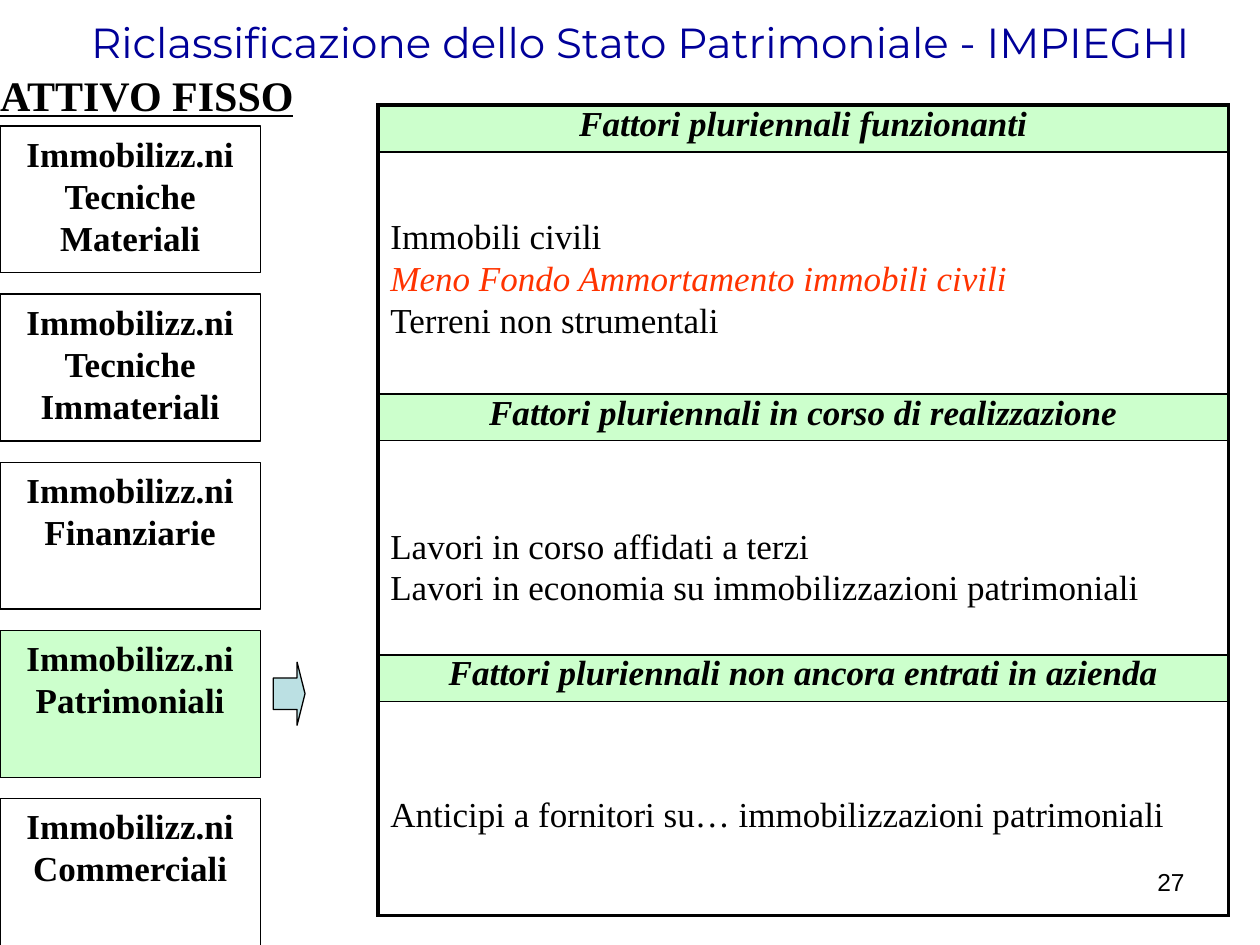
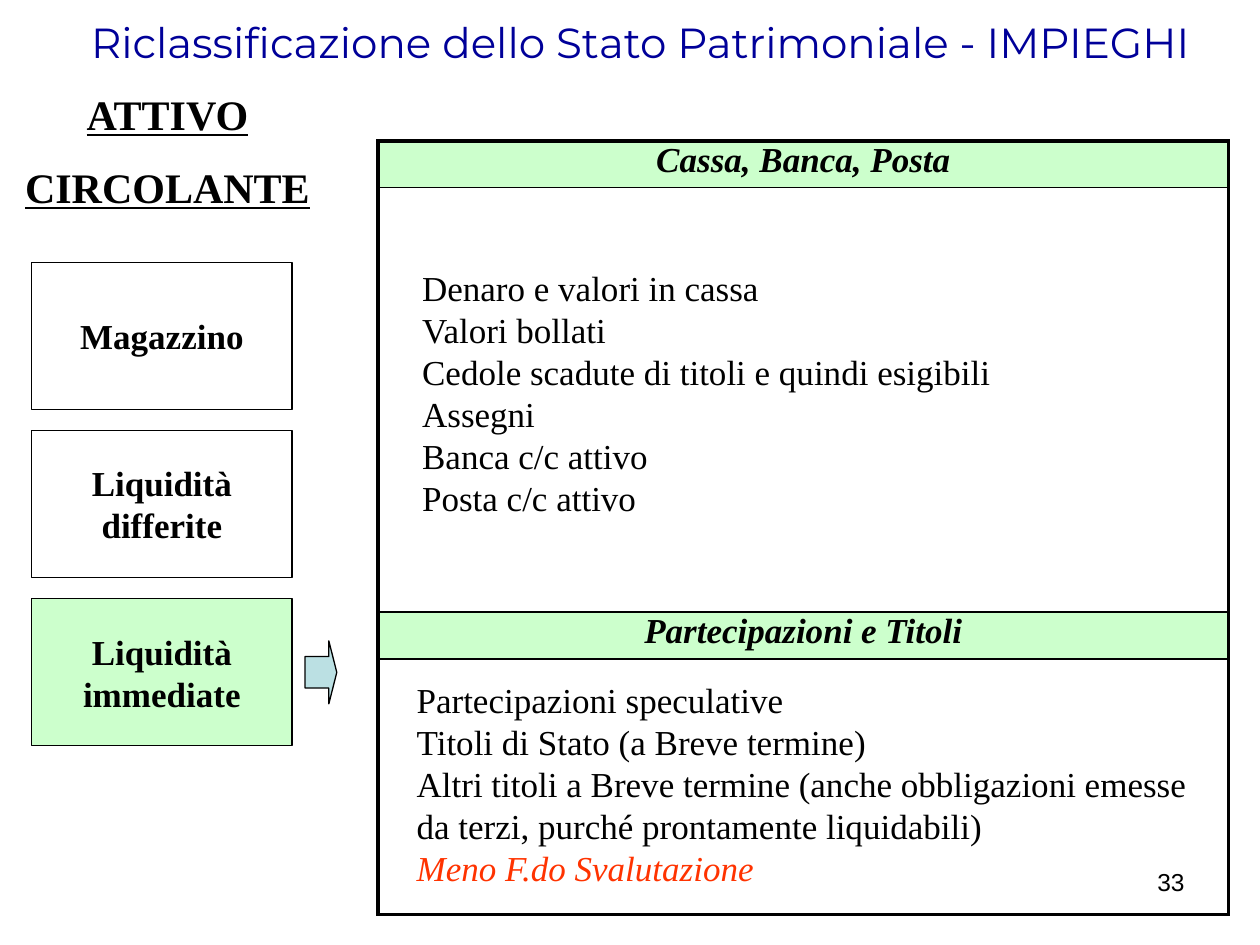
from dataclasses import dataclass

from lxml import etree
from pptx import Presentation
from pptx import util as u
from pptx.dml.color import RGBColor
from pptx.enum import shapes, text
from pptx.oxml.ns import qn

COLOURS = {
    "title": "000099",
    "ink": "000000",
    "deduction": "FF3300",
    "active": "CCFFCC",
    "plain": "FFFFFF",
    "arrow": "BBE0E3",
}
SERIF = "Times New Roman"
TITLE = "Riclassificazione dello Stato Patrimoniale - IMPIEGHI"
LEFT, CENTRE, RIGHT = text.PP_ALIGN.LEFT, text.PP_ALIGN.CENTER, text.PP_ALIGN.RIGHT
TOP, MIDDLE = text.MSO_ANCHOR.TOP, text.MSO_ANCHOR.MIDDLE

CATEGORY_WIDTH, CATEGORY_HEIGHT, CATEGORY_PITCH = 5.25, 2.96, 3.39
ARROW_OFFSET, ARROW_WIDTH, ARROW_HEIGHT = 5.51, 0.64, 1.27
HEADING_HEIGHT = 0.94
THICK, THIN = 2.25, 1


@dataclass
class Section:
    """A heading row and the row below it; the note box is relative to that row."""
    heading: str
    height: float
    note_box: tuple
    lines: list
    tight: bool = False


def rgb(name):
    return RGBColor.from_string(COLOURS[name])


def write(frame, words, size=20, font=SERIF, colour="ink", bold=False, italic=False,
          underline=False, align=LEFT, spacing=None, before=0):
    """Add one formatted paragraph, filling the first one if it is empty."""
    para = frame.add_paragraph() if frame.text else frame.paragraphs[0]
    para.alignment = align
    para.line_spacing = spacing
    para.space_before = u.Pt(before)
    span = para.add_run()
    span.text = words
    span.font.size = u.Pt(size)
    span.font.name = font
    span.font.color.rgb = rgb(colour)
    span.font.bold, span.font.italic, span.font.underline = bold, italic, underline


def add_text_box(page, box):
    frame = page.shapes.add_textbox(*map(u.Cm, box)).text_frame
    frame.word_wrap = True
    return frame


def add_solid(page, kind, box, fill):
    shape = page.shapes.add_shape(kind, *map(u.Cm, box))
    shape.shadow.inherit = False
    shape.fill.solid()
    shape.fill.fore_color.rgb = rgb(fill)
    shape.line.color.rgb = rgb("ink")
    shape.line.width = u.Pt(0.75)
    return shape


def set_borders(cell, **widths):
    properties = cell._tc.get_or_add_tcPr()
    for side in ("L", "R", "T", "B"):
        line = etree.SubElement(properties, qn(f"a:ln{side}"), w=str(u.Pt(widths[side])))
        fill = etree.SubElement(line, qn("a:solidFill"))
        etree.SubElement(fill, qn("a:srgbClr"), val=COLOURS["ink"])


def add_page(deck, number):
    page = deck.slides.add_slide(deck.slide_layouts[5])
    title = page.shapes.title
    title.left, title.top, title.width, title.height = map(u.Cm, (0.84, 0.2, 24.13, 0.99))
    frame = title.text_frame
    frame.auto_size = text.MSO_AUTO_SIZE.NONE
    frame.word_wrap = False
    frame.vertical_anchor = TOP
    write(frame, TITLE, size=24, font="Montserrat", colour="title", align=CENTRE)
    write(add_text_box(page, (18.21, 17.35, 5.92, 1.32)), str(number),
          size=14, font="Arial", align=RIGHT)
    return page


def add_group_heading(page, box, lines):
    frame = add_text_box(page, box)
    for line in lines:
        write(frame, line, size=24, bold=True, underline=True, align=CENTRE, before=13)


def add_categories(page, origin, names, active, anchor, arrow_drop):
    """Stack the category boxes and point an arrow from the active one."""
    left, top = origin
    for index, name in enumerate(names):
        box_top = top + index * CATEGORY_PITCH
        fill = "active" if name == active else "plain"
        shape = add_solid(page, shapes.MSO_SHAPE.RECTANGLE,
                          (left, box_top, CATEGORY_WIDTH, CATEGORY_HEIGHT), fill)
        shape.text_frame.word_wrap = True
        shape.text_frame.vertical_anchor = anchor
        write(shape.text_frame, name, bold=True, align=CENTRE)
        if name == active:
            arrow = add_solid(page, shapes.MSO_SHAPE.RIGHT_ARROW,
                              (left + ARROW_OFFSET, box_top + arrow_drop,
                               ARROW_WIDTH, ARROW_HEIGHT), "arrow")
            arrow.adjustments[0], arrow.adjustments[1] = 0.5, 0.25


def add_panel(page, origin, width, sections):
    """Draw the table of sections, then the notes over its tall rows."""
    left, top = origin
    heights = [h for section in sections for h in (HEADING_HEIGHT, section.height)]
    table = page.shapes.add_table(len(heights), 1, *map(u.Cm, (left, top, width, sum(heights)))).table
    table.first_row = table.horz_banding = False
    for index, height in enumerate(heights):
        table.rows[index].height = u.Cm(height)
        cell = table.cell(index, 0)
        set_borders(cell, L=THICK, R=THICK, T=THIN if index else THICK,
                    B=THICK if index == len(heights) - 1 else THIN)
        if index % 2:
            cell.fill.background()
        else:
            cell.fill.solid()
            cell.fill.fore_color.rgb = rgb("active")
            write(cell.text_frame, sections[index // 2].heading, bold=True, italic=True,
                  align=CENTRE, spacing=0.8, before=4.5)

    for section in sections:
        top += HEADING_HEIGHT
        dx, dy, note_width, note_height = section.note_box
        frame = add_text_box(page, (left + dx, top + dy, note_width, note_height))
        layout = {"spacing": 0.8, "before": 4.5} if section.tight else {}
        for line in section.lines:
            deducted = line.startswith("Meno ")
            write(frame, line, colour="deduction" if deducted else "ink",
                  italic=deducted, **layout)
        top += section.height


def add_fixed_assets(deck):
    page = add_page(deck, 27)
    add_panel(page, (7.62, 2.12), 17.15, [
        Section("Fattori pluriennali funzionanti", 4.88, (0, 1.14, 13.34, 2.79),
                ["Immobili civili", "Meno Fondo Ammortamento immobili civili",
                 "Terreni non strumentali"]),
        Section("Fattori pluriennali in corso di realizzazione", 4.32, (0, 1.73, 16.93, 1.8),
                ["Lavori in corso affidati a terzi",
                 "Lavori in economia su immobilizzazioni patrimoniali"], tight=True),
        Section("Fattori pluriennali non ancora entrati in azienda", 4.32, (0, 1.88, 16.93, 0.94),
                ["Anticipi a fornitori su… immobilizzazioni patrimoniali"], tight=True),
    ])
    kinds = ("Tecniche Materiali", "Tecniche Immateriali", "Finanziarie",
             "Patrimoniali", "Commerciali")
    add_categories(page, (0, 2.54), [f"Immobilizz.ni {kind}" for kind in kinds],
                   active="Immobilizz.ni Patrimoniali", anchor=TOP, arrow_drop=0.64)
    add_group_heading(page, (-0.43, 1.27, 6.78, 1.27), ["ATTIVO FISSO"])


def add_current_assets(deck):
    page = add_page(deck, 33)
    add_group_heading(page, (0.2, 1.65, 6.35, 2.79), ["ATTIVO", "CIRCOLANTE"])
    add_panel(page, (7.62, 2.84), 17.15, [
        Section("Cassa, Banca, Posta", 8.56, (0.64, 1.47, 13.34, 5.38),
                ["Denaro e valori in cassa", "Valori bollati",
                 "Cedole scadute di titoli e quindi esigibili", "Assegni",
                 "Banca c/c attivo", "Posta c/c attivo"]),
        Section("Partecipazioni e Titoli", 5.16, (0.53, 0.28, 16.08, 4.52),
                ["Partecipazioni speculative", "Titoli di Stato (a Breve termine)",
                 "Altri titoli a Breve termine (anche obbligazioni emesse da terzi, "
                 "purché prontamente liquidabili)", "Meno F.do Svalutazione"]),
    ])
    add_categories(page, (0.64, 5.29), ["Magazzino", "Liquidità differite", "Liquidità immediate"],
                   active="Liquidità immediate", anchor=MIDDLE, arrow_drop=0.85)


def main():
    deck = Presentation()
    deck.slide_width, deck.slide_height = u.Cm(25.4), u.Cm(19.05)
    add_fixed_assets(deck)
    add_current_assets(deck)
    deck.save("out.pptx")


if __name__ == "__main__":
    main()
